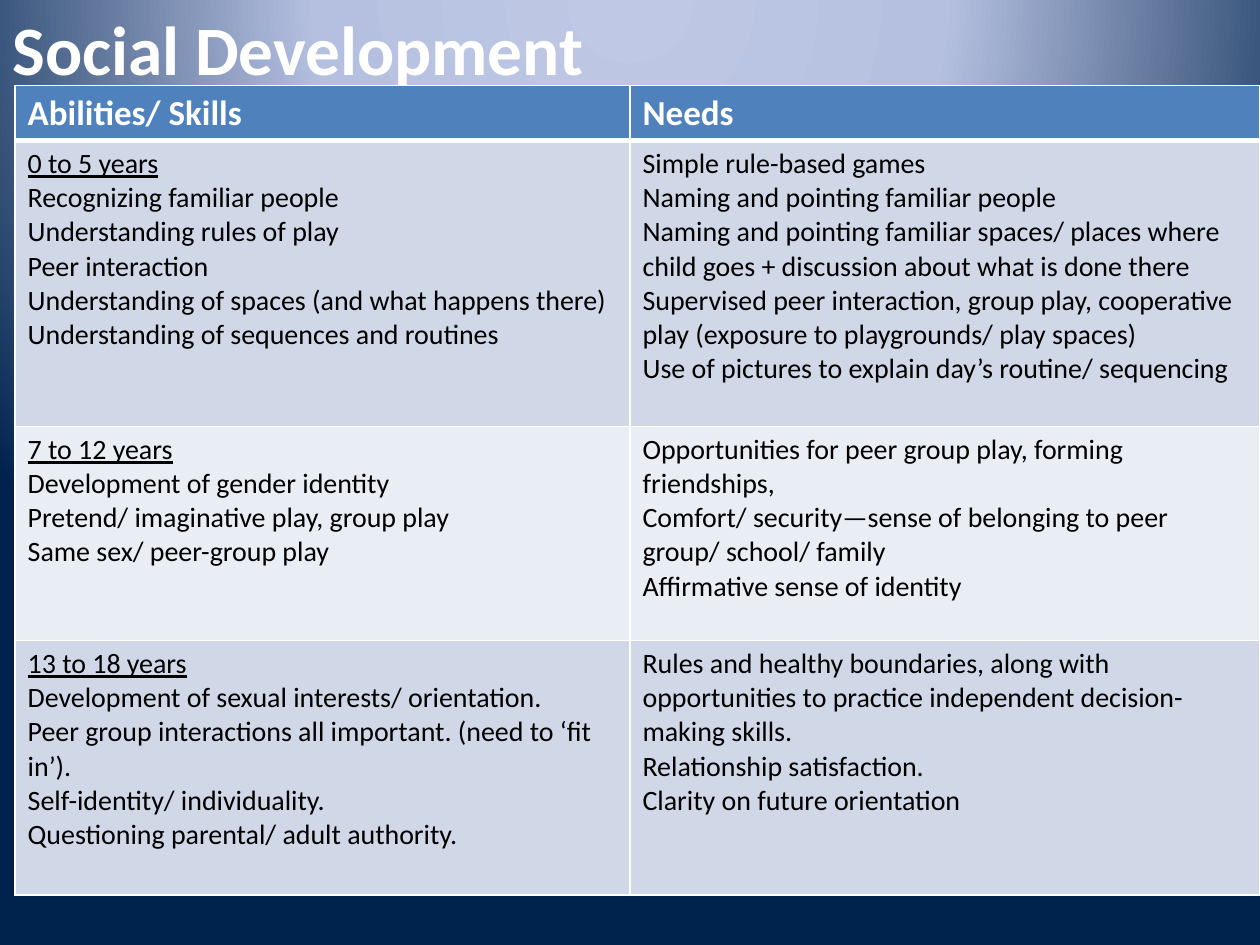
from pptx import Presentation
from pptx.dml.color import RGBColor
from pptx.enum.text import MSO_ANCHOR
from pptx.oxml import parse_xml
from pptx.oxml.ns import nsdecls, qn
from pptx.util import Inches, Pt

WHITE = RGBColor(0xFF, 0xFF, 0xFF)
BLACK = RGBColor(0, 0, 0)
BLUE = RGBColor(0x4F, 0x81, 0xBD)
BANDS = [RGBColor(0xD0, 0xD8, 0xE8), RGBColor(0xE9, 0xED, 0xF4)]
GLOW = [(0, RGBColor(0xBF, 0xC9, 0xE5)),
        (40, RGBColor(0xB5, 0xC0, 0xE0)),
        (100, RGBColor(0x00, 0x23, 0x4D))]

WIDTHS = [4.88, 5]
HEIGHTS = [0.43, 2.27, 1.7, 2.02]
HEADS = ["Abilities/ Skills", "Needs"]
AGES = [
    (["0 to 5 years",
      "Recognizing familiar people",
      "Understanding rules of play",
      "Peer interaction",
      "Understanding of spaces (and what happens there)",
      "Understanding of sequences and routines"],
     ["Simple rule-based games",
      "Naming and pointing familiar people",
      "Naming and pointing familiar spaces/ places where child goes "
      "+ discussion about what is done there",
      "Supervised peer interaction, group play, cooperative play "
      "(exposure to playgrounds/ play spaces)",
      "Use of pictures to explain day’s routine/ sequencing"]),
    (["7 to 12 years",
      "Development of gender identity",
      "Pretend/ imaginative play, group play",
      "Same sex/ peer-group play"],
     ["Opportunities for peer group play, forming friendships,",
      "Comfort/ security—sense of belonging to peer group/ school/ family",
      "Affirmative sense of identity"]),
    (["13 to 18 years",
      "Development of sexual interests/ orientation.",
      "Peer group interactions all important. (need to ‘fit in’).",
      "Self-identity/ individuality.",
      "Questioning parental/ adult authority."],
     ["Rules and healthy boundaries, along with opportunities to practice "
      "independent decision-making skills.",
      "Relationship satisfaction.",
      "Clarity on future orientation"]),
]


def write(frame, lines, size=16, color=BLACK, bold=False, lead=False):
    for i, line in enumerate(lines):
        para = frame.paragraphs[0] if i == 0 else frame.add_paragraph()
        run = para.add_run()
        run.text = line
        font = run.font
        font.name, font.size, font.bold = "Calibri", Pt(size), bold
        font.color.rgb = color
        font.underline = lead and i == 0


class Deck:
    """Holds the style and the current slide."""

    def __init__(self, show):
        self.slide = show.slides.add_slide(show.slide_layouts[6])

    def glow(self, stops):
        self.slide.background.fill.gradient()
        old = self.slide.element.find(".//" + qn("a:gradFill"))
        marks = "".join(
            f'<a:gs pos="{pos * 1000}"><a:srgbClr val="{color}"/></a:gs>'
            for pos, color in stops)
        new = parse_xml(
            f'<a:gradFill {nsdecls("a")} rotWithShape="1"><a:gsLst>{marks}</a:gsLst>'
            '<a:path path="circle"><a:fillToRect l="50000" t="-80000" '
            'r="50000" b="180000"/></a:path></a:gradFill>')
        old.getparent().replace(old, new)

    def title(self, text):
        box = self.slide.shapes.add_textbox(0, 0, Inches(10), Inches(0.76))
        frame = box.text_frame
        frame.word_wrap = True
        frame.vertical_anchor = MSO_ANCHOR.MIDDLE
        write(frame, [text], size=39.6, color=WHITE, bold=True)

    def table(self, left, top, widths, heights):
        frame = self.slide.shapes.add_table(
            len(heights), len(widths), Inches(left), Inches(top),
            Inches(sum(widths)), Inches(sum(heights)))
        grid = frame.table
        for col, width in zip(grid.columns, widths):
            col.width = Inches(width)
        for row, height in zip(grid.rows, heights):
            row.height = Inches(height)
        return grid

    def cell(self, cell, lines, fill, top=1, base=1, **style):
        cell.fill.solid()
        cell.fill.fore_color.rgb = fill
        write(cell.text_frame, lines, **style)
        props = cell._tc.get_or_add_tcPr()
        for i, (side, wide) in enumerate(zip("LRTB", (1, 1, top, base))):
            props.insert(i, parse_xml(
                f'<a:ln{side} {nsdecls("a")} w="{Pt(wide)}"><a:solidFill>'
                f'<a:srgbClr val="{WHITE}"/></a:solidFill></a:ln{side}>'))


def main():
    show = Presentation()
    show.slide_width, show.slide_height = Inches(10), Inches(7.5)
    deck = Deck(show)
    deck.glow(GLOW)
    deck.title("Social Development")
    grid = deck.table(0.12, 0.68, WIDTHS, HEIGHTS)
    for c, head in enumerate(HEADS):
        deck.cell(grid.cell(0, c), [head], BLUE, base=3,
                  size=20, color=WHITE, bold=True)
    for r, age in enumerate(AGES):
        for c, lines in enumerate(age):
            deck.cell(grid.cell(r + 1, c), lines, BANDS[r % 2],
                      top=3 if r == 0 else 1, lead=c == 0)
    show.save("out.pptx")


if __name__ == "__main__":
    main()
